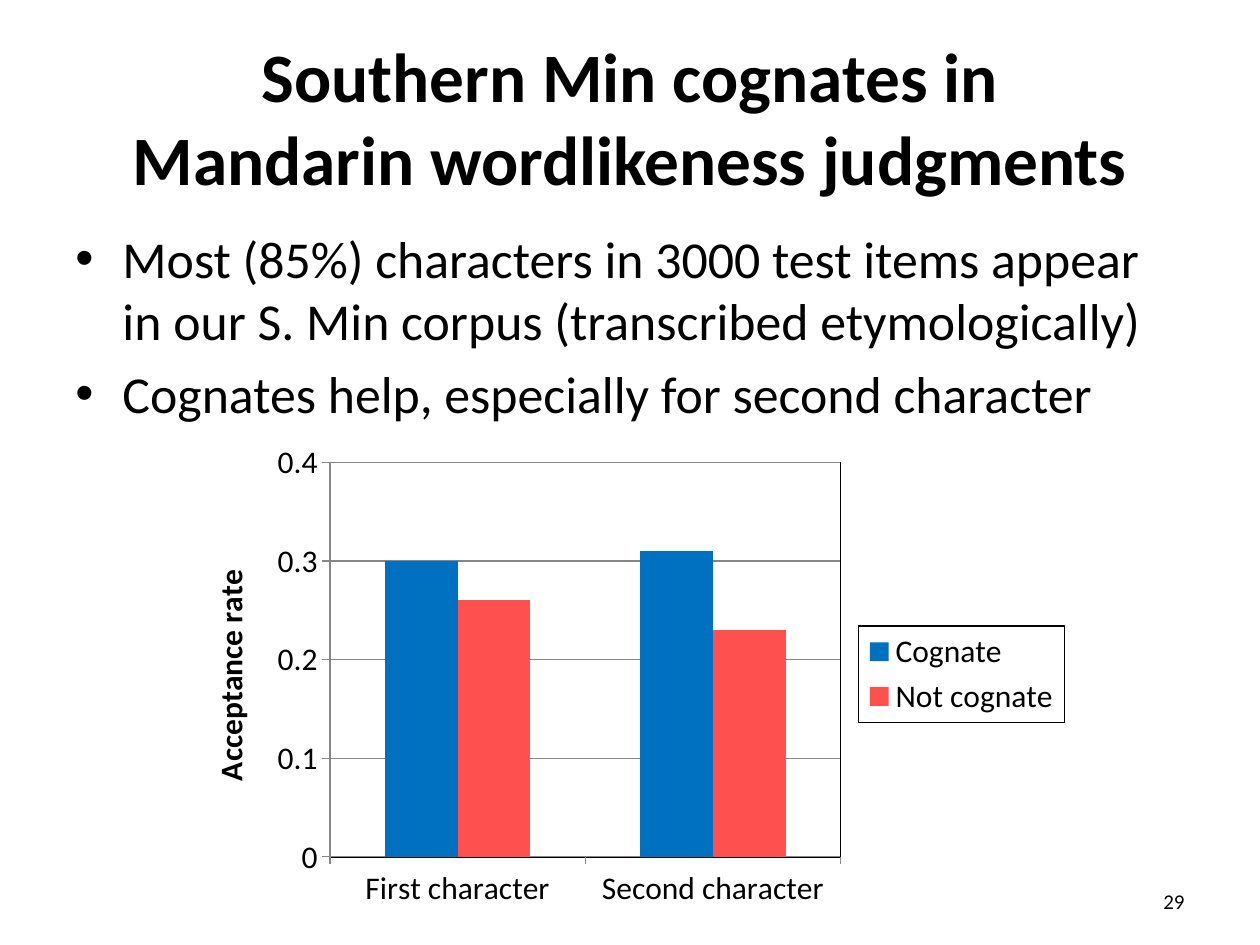
from lxml import etree
from pptx import Presentation
from pptx import util as u
from pptx.chart.data import CategoryChartData
from pptx.dml.color import RGBColor
from pptx.enum import chart as charts, text
from pptx.oxml import parse_xml
from pptx.oxml.ns import nsdecls, qn

FONT = "Calibri"
COLORS = {"text": "000000", "axis": "868686", "cognate": "0070C0", "other": "FF5050"}


def color(name):
    return RGBColor.from_string(COLORS[name])


def style_font(font, size, bold=False):
    font.name = FONT
    font.size = u.Pt(size)
    font.bold = bold
    font.color.rgb = color("text")


def add_text(page, place, content, size, align, anchor, bold=False):
    box = page.shapes.add_textbox(*(u.Cm(length) for length in place))
    frame = box.text_frame
    frame.text = content
    frame.word_wrap = True
    frame.vertical_anchor = anchor
    for para in frame.paragraphs:
        para.alignment = align
        for span in para.runs:
            style_font(span.font, size, bold)
    return frame


def add_bullets(frame):
    for para in frame.paragraphs:
        para.space_before = u.Pt(6)
        properties = para._p.get_or_add_pPr()
        properties.set("marL", str(u.Cm(0.95)))
        properties.set("indent", str(u.Cm(-0.95)))
        etree.SubElement(properties, qn("a:buFont")).set("typeface", "Arial")
        etree.SubElement(properties, qn("a:buChar")).set("char", "•")


def set_layout(element, x, y, w, h, inner=False):
    for old in element.findall(qn("c:layout")):
        element.remove(old)
    target = '<c:layoutTarget val="inner"/>' if inner else ""
    sizes = "".join(f'<c:{key} val="{value}"/>'
                    for key, value in zip("xywh", (x, y, w, h)))
    layout = parse_xml(
        f'<c:layout {nsdecls("c")}><c:manualLayout>{target}'
        f'<c:xMode val="edge"/><c:yMode val="edge"/>{sizes}'
        '</c:manualLayout></c:layout>')
    if inner:
        element.insert(0, layout)
    else:
        element.find(qn("c:legendPos")).addnext(layout)


def add_border(element, before=None):
    border = parse_xml(
        f'<c:spPr {nsdecls("c", "a")}><a:noFill/><a:ln w="9525"><a:solidFill>'
        f'<a:srgbClr val="{COLORS["text"]}"/></a:solidFill></a:ln></c:spPr>')
    if before is None:
        element.append(border)
    else:
        element.find(qn(before)).addprevious(border)


def style_line(line):
    line.color.rgb = color("axis")
    line.width = u.Pt(0.75)


def add_column_chart(page, place, categories, series_values, series_colors):
    data = CategoryChartData()
    data.categories = categories
    for name, values in series_values.items():
        data.add_series(name, values)
    chart = page.shapes.add_chart(
        charts.XL_CHART_TYPE.COLUMN_CLUSTERED,
        *(u.Cm(length) for length in place), data).chart
    style_font(chart.font, 18)
    chart.has_title = False
    plot = chart.plots[0]
    plot.gap_width = 150
    plot.overlap = 0
    plot.vary_by_categories = False
    for series, name in zip(plot.series, series_colors):
        series.format.fill.solid()
        series.format.fill.fore_color.rgb = color(name)
    return chart


def style_axes(chart, title):
    for axis in (chart.category_axis, chart.value_axis):
        axis.major_tick_mark = charts.XL_TICK_MARK.OUTSIDE
        axis.minor_tick_mark = charts.XL_TICK_MARK.NONE
        style_line(axis.format.line)
        style_font(axis.tick_labels.font, 18)
    axis = chart.value_axis
    axis.minimum_scale, axis.maximum_scale, axis.major_unit = 0, 0.4, 0.1
    axis.has_major_gridlines = True
    style_line(axis.major_gridlines.format.line)
    frame = axis.axis_title.text_frame
    frame.text = title
    style_font(frame.paragraphs[0].runs[0].font, 18, bold=True)


def style_legend(chart):
    chart.has_legend = True
    legend = chart.legend
    legend.position = charts.XL_LEGEND_POSITION.RIGHT
    legend.include_in_layout = False
    style_font(legend.font, 18)
    set_layout(legend._element, 0.76, 0.4, 0.23, 0.2)
    add_border(legend._element, "c:txPr")


def main():
    deck = Presentation()
    deck.slide_width, deck.slide_height = u.Cm(25.4), u.Cm(19.05)
    page = deck.slides.add_slide(deck.slide_layouts[6])
    align, anchor = text.PP_ALIGN, text.MSO_ANCHOR

    add_text(page, (1.27, 0.76, 22.86, 3.18),
             "Southern Min cognates in\vMandarin wordlikeness judgments",
             39.6, align.CENTER, anchor.MIDDLE, bold=True)
    body = add_text(
        page, (1.27, 4.45, 22.86, 4.5),
        "Most (85%) characters in 3000 test items appear in our S. Min corpus "
        "(transcribed etymologically)\n"
        "Cognates help, especially for second character",
        29.6, align.LEFT, anchor.TOP)
    add_bullets(body)
    add_text(page, (18.21, 17.65, 5.92, 1.02), "29", 12, align.RIGHT, anchor.MIDDLE)

    chart = add_column_chart(
        page, (3.58, 8.74, 18.06, 9.7),
        ["First character", "Second character"],
        {"Cognate": (0.3, 0.31), "Not cognate": (0.26, 0.23)},
        ("cognate", "other"))
    style_axes(chart, "Acceptance rate")
    style_legend(chart)
    plot_area = chart._chartSpace.chart.plotArea
    set_layout(plot_area, 0.17, 0.06, 0.57, 0.82, inner=True)
    add_border(plot_area)

    deck.save("out.pptx")


if __name__ == "__main__":
    main()
